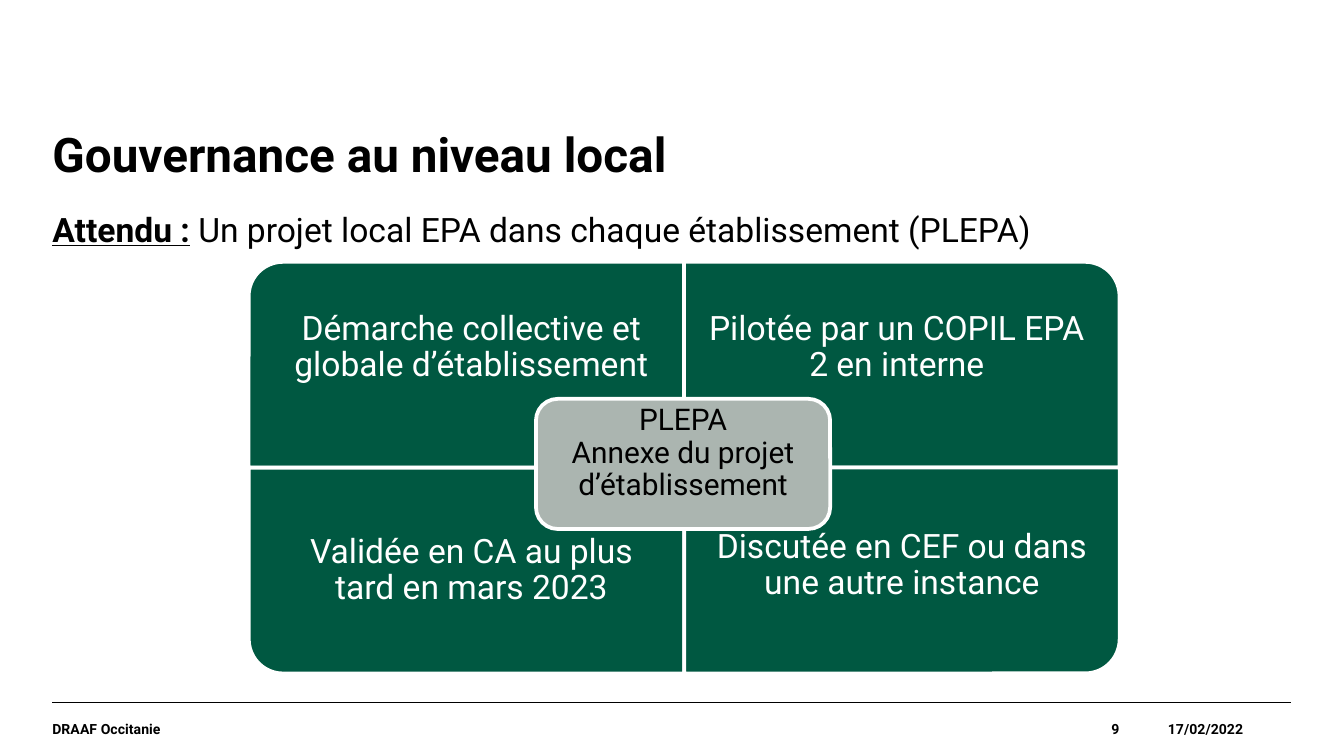
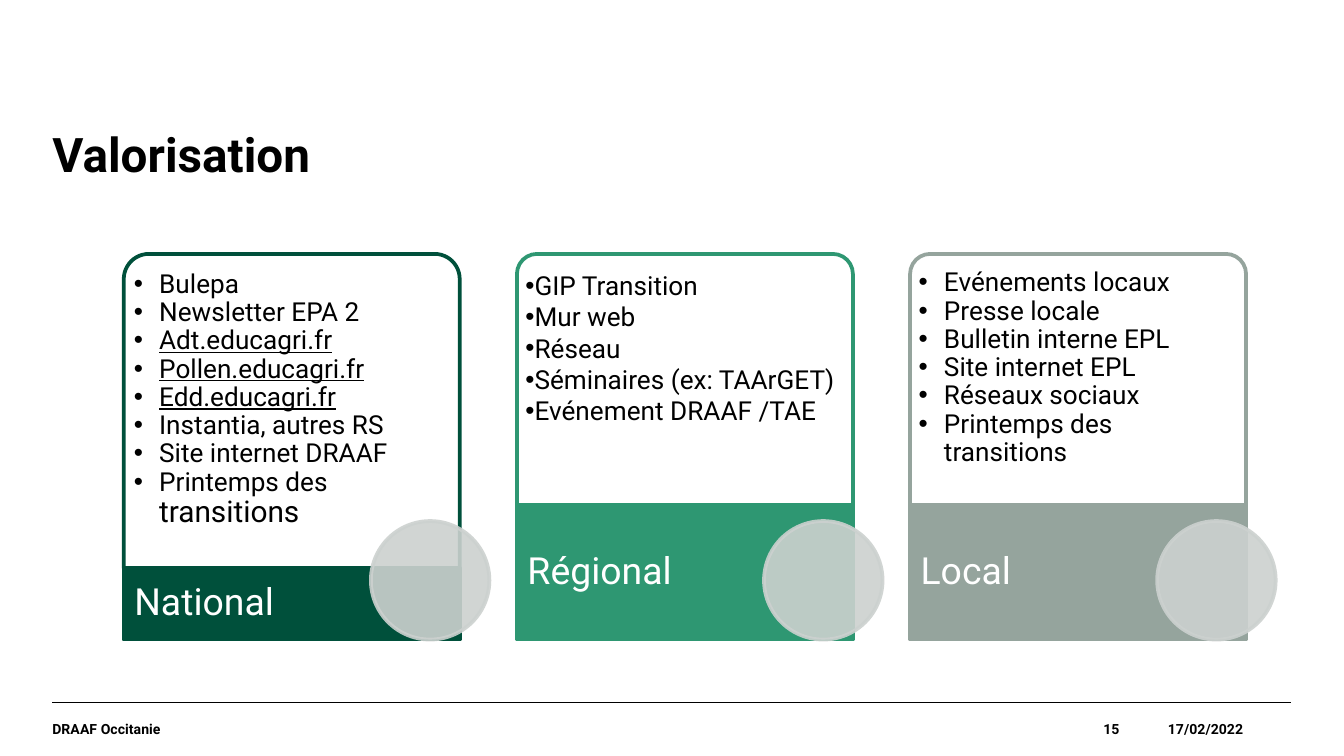
"""Build two slides on the local governance and the promotion of the EPA plan."""
from lxml.etree import SubElement
from pptx import Presentation
from pptx.dml.color import RGBColor
from pptx.enum.shapes import MSO_CONNECTOR, MSO_SHAPE
from pptx.enum.text import MSO_ANCHOR as ANCHOR, MSO_AUTO_SIZE, PP_ALIGN as ALIGN
from pptx.oxml.ns import qn
from pptx.util import Cm, Pt

FONT = "Roboto"
BLACK, WHITE = "000000", "FFFFFF"
GREEN, GREY, PALE = "005841", "ABB5B0", "CCD1CF"
MARGIN, CONTENT_W = 0.99, 23.4
FOOTER_TOP, FOOTER_H = 13.28, 0.99

rgb = RGBColor.from_string


def write(tf, lines, size, color=BLACK, bold=False, align=ALIGN.LEFT,
          anchor=ANCHOR.TOP, spacing=1, insets=(0, 0, 0, 0), bullet_indent=None):
    """Fill a text frame; insets are left, top, right, bottom in cm."""
    tf.word_wrap = True
    tf.auto_size = MSO_AUTO_SIZE.NONE
    tf.vertical_anchor = anchor
    tf.margin_left, tf.margin_top, tf.margin_right, tf.margin_bottom = map(Cm, insets)
    for i, line in enumerate(lines):
        p = tf.paragraphs[0] if i == 0 else tf.add_paragraph()
        p.text = line
        p.alignment = align
        p.line_spacing = spacing
        p.space_before = p.space_after = Pt(0)
        pPr = p._p.get_or_add_pPr()
        indent = Cm(bullet_indent or 0)
        pPr.set("marL", str(indent))
        pPr.set("indent", str(-indent))
        if bullet_indent is None:
            SubElement(pPr, qn("a:buNone"))
        else:
            SubElement(pPr, qn("a:buFont")).set("typeface", "Arial")
            SubElement(pPr, qn("a:buChar")).set("char", "•")
        for r in p.runs:
            r.font.name = FONT
            r.font.size = Pt(size)
            r.font.bold = bold
            r.font.color.rgb = rgb(color)


def paint(sp, fill, line, opacity=None):
    """Set fill and outline; the opacity in percent applies to the fill colour."""
    sp.shadow.inherit = False
    sp.fill.solid()
    sp.fill.fore_color.rgb = rgb(fill)
    sp.line.color.rgb = rgb(line)
    sp.line.width = Pt(2)
    if opacity:
        for clr in sp._element.spPr.iter(qn("a:srgbClr")):
            if clr.get("val") == fill:
                SubElement(clr, qn("a:alpha")).set("val", str(opacity * 1000))


prs = Presentation()
prs.slide_width, prs.slide_height = Cm(25.4), Cm(14.29)

slides = []
for layout, title, number in [(1, "Gouvernance au niveau local", "9"),
                              (5, "Valorisation", "15")]:
    s = prs.slides.add_slide(prs.slide_layouts[layout])
    slides.append(s)
    rule = s.shapes.add_connector(MSO_CONNECTOR.STRAIGHT, Cm(MARGIN), Cm(FOOTER_TOP),
                                  Cm(MARGIN + CONTENT_W), Cm(FOOTER_TOP))
    rule.line.color.rgb = rgb(BLACK)
    rule.line.width = Pt(0.8)
    SubElement(rule._element.spPr, qn("a:effectLst"))

    sp = s.shapes.title
    sp.left, sp.top, sp.width, sp.height = Cm(MARGIN), Cm(2.49), Cm(CONTENT_W), Cm(2)
    write(sp.text_frame, [title], 25.5, bold=True, spacing=0.9)

    for text, left, width, align in [("17/02/2022", 21.16, 3.25, ALIGN.CENTER),
                                     ("DRAAF Occitanie", MARGIN, 16.41, ALIGN.LEFT),
                                     (number, 17.4, 3.76, ALIGN.RIGHT)]:
        sp = s.shapes.add_textbox(Cm(left), Cm(FOOTER_TOP), Cm(width), Cm(FOOTER_H))
        write(sp.text_frame, [text], 7.5, bold=True, align=align, anchor=ANCHOR.MIDDLE)

governance, promotion = slides

sp = governance.placeholders[1]
sp.left, sp.top, sp.width, sp.height = Cm(MARGIN), Cm(3.94), Cm(20.19), Cm(8.1)
write(sp.text_frame, ["Attendu :"], 18, bold=True)
p = sp.text_frame.paragraphs[0]
p.runs[0].font.underline = True
r = p.add_run()
r.text = " Un projet local EPA dans chaque établissement (PLEPA)"
r.font.name = FONT
r.font.size = Pt(18)
r.font.bold = False
r.font.color.rgb = rgb(BLACK)

QUAD_LEFT, QUAD_TOP, QUAD_W, QUAD_H = 4.7, 4.95, 8.23, 3.89
quadrants = [
    ("Démarche collective et globale d’établissement", 0, 0, 0, True, {}),
    ("Pilotée par un COPIL EPA 2 en interne", 1, 0, 0, False, {}),
    ("Validée en CA au plus tard en mars 2023", 0, 1, 180, False, {"rot": "10800000"}),
    ("Discutée en CEF ou dans une autre instance", 1, 1, 90, False, {"vert": "vert270"}),
]
for text, col, row, angle, mirrored, body in quadrants:
    w, h = (QUAD_H, QUAD_W) if angle == 90 else (QUAD_W, QUAD_H)
    left = QUAD_LEFT + col * QUAD_W + (QUAD_W - w) / 2
    top = QUAD_TOP + row * QUAD_H + (QUAD_H - h) / 2
    sp = governance.shapes.add_shape(MSO_SHAPE.ROUND_1_RECTANGLE,
                                     Cm(left), Cm(top), Cm(w), Cm(h))
    paint(sp, GREEN, WHITE)
    sp.rotation = angle
    if mirrored:
        sp._element.spPr.find(qn("a:xfrm")).set("flipH", "1")
    write(sp.text_frame, [text], 18, WHITE, align=ALIGN.CENTER, anchor=ANCHOR.MIDDLE,
          spacing=0.9, insets=(0.36, 0.36, 0.36, 0.36 if row else 1.02))
    for key, value in body.items():
        sp.text_frame._txBody.bodyPr.set(key, value)

sp = governance.shapes.add_shape(MSO_SHAPE.ROUNDED_RECTANGLE,
                                 Cm(10.13), Cm(7.54), Cm(5.56), Cm(2.46))
paint(sp, GREY, WHITE)
write(sp.text_frame, ["PLEPA\vAnnexe du projet d’établissement"], 16,
      align=ALIGN.CENTER, spacing=0.9, insets=(0.18, 0, 0.18, 0))

CARD_LEFT, CARD_TOP, CARD_W, CARD_PITCH, CARD_BOTTOM = 2.34, 4.8, 6.35, 7.43, 12.09
DISC = 2.24
cards = [
    ("National", "00503B", 1.35, 0.48, 0.9,
     ["Bulepa", "Newsletter EPA 2", "Adt.educagri.fr", "Pollen.educagri.fr",
      "Edd.educagri.fr", "Instantia, autres RS", "Site internet DRAAF",
      "Printemps des transitions"]),
    ("Régional", "2E9772", 2.54, 0, 1,
     ["GIP Transition", "Mur web", "Réseau", "Séminaires (ex: TAArGET)",
      "Evénement DRAAF /TAE"]),
    ("Local", "95A49D", 2.54, 0.48, 0.9,
     ["Evénements locaux", "Presse locale", "Bulletin interne EPL",
      "Site internet EPL", "Réseaux sociaux", "Printemps des transitions"]),
]
for i, (name, color, band_h, indent, spacing, items) in enumerate(cards):
    left = CARD_LEFT + i * CARD_PITCH
    band_top = CARD_BOTTOM - band_h
    sp = promotion.shapes.add_shape(MSO_SHAPE.ROUND_2_SAME_RECTANGLE, Cm(left),
                                    Cm(CARD_TOP), Cm(CARD_W), Cm(band_top - CARD_TOP))
    sp.adjustments[0] = 0.08
    paint(sp, WHITE, color, 90)
    write(sp.text_frame, items, 14, spacing=spacing, bullet_indent=indent,
          insets=(0.05, 0.18, 0.05, 0.05))
    for p in sp.text_frame.paragraphs:
        if p.text.endswith(".fr"):
            p.runs[0].font.underline = True
    if name == "National":
        p.runs[0].text = "Printemps des "
        r = p.add_run()
        r.text = "transitions"
        r.font.name = FONT
        r.font.size = Pt(16)
        r.font.color.rgb = rgb(BLACK)

    sp = promotion.shapes.add_shape(MSO_SHAPE.RECTANGLE, Cm(left), Cm(band_top),
                                    Cm(CARD_W), Cm(band_h))
    paint(sp, color, color)
    write(sp.text_frame, [name], 20, WHITE, anchor=ANCHOR.MIDDLE, spacing=0.9,
          insets=(0.2, 0, 0.08, 0))

    sp = promotion.shapes.add_shape(MSO_SHAPE.OVAL, Cm(left + 4.67),
                                    Cm(CARD_BOTTOM - DISC), Cm(DISC), Cm(DISC))
    paint(sp, PALE, PALE, 90)

prs.save("out.pptx")
